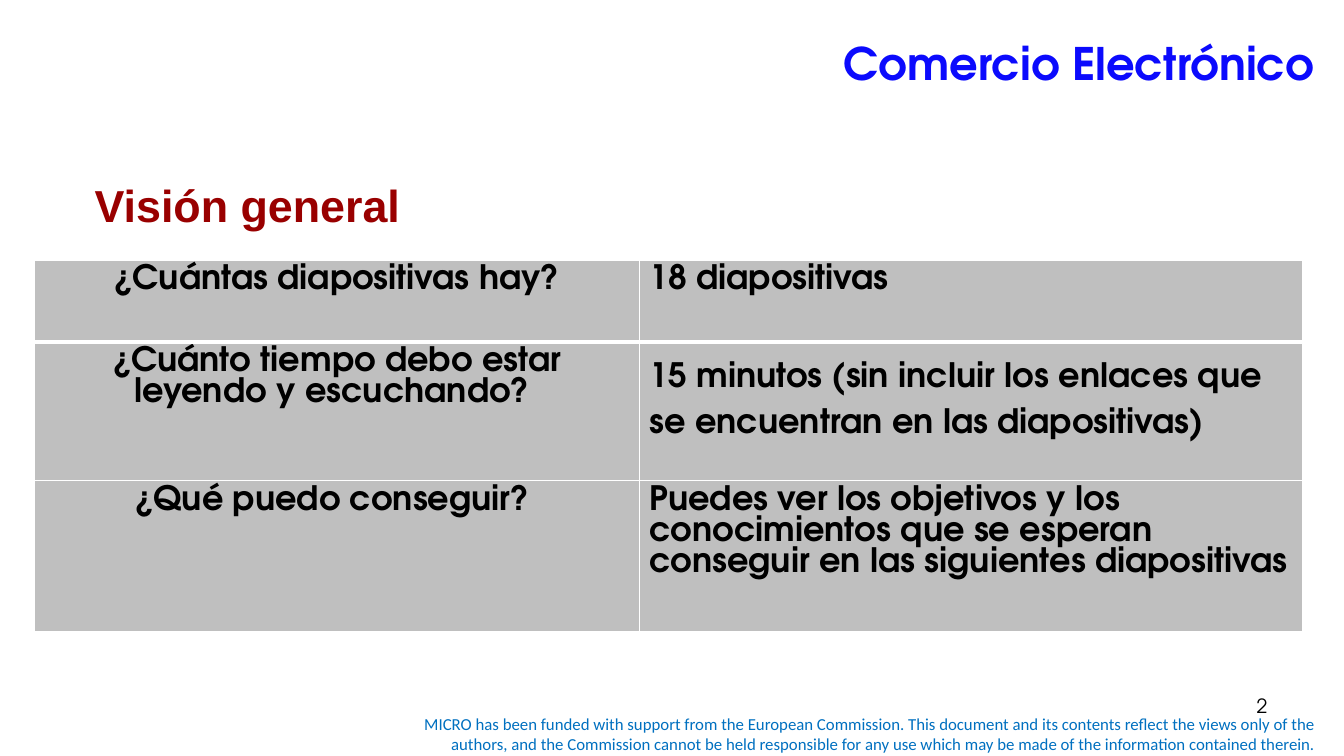
from lxml import etree
from pptx import Presentation
from pptx.dml.color import RGBColor
from pptx.enum.text import MSO_ANCHOR, PP_ALIGN
from pptx.oxml.ns import qn
from pptx.util import Inches, Pt

LEFT, CENTER, RIGHT = PP_ALIGN.LEFT, PP_ALIGN.CENTER, PP_ALIGN.RIGHT
TOP, MIDDLE = MSO_ANCHOR.TOP, MSO_ANCHOR.MIDDLE

BLUE = RGBColor(0x0B, 0x0A, 0xFD)
FOOTER_BLUE = RGBColor(0x00, 0x70, 0xC0)
DARK_RED = RGBColor(0x99, 0x00, 0x00)
GRAY = RGBColor(0xBF, 0xBF, 0xBF)
BLACK = RGBColor(0x00, 0x00, 0x00)
WHITE = RGBColor(0xFF, 0xFF, 0xFF)

MAIN_FONT = "TeX Gyre Adventor"
TITLE_ONLY = 5

FUNDING = (
    "MICRO has been funded with support from the European Commission. "
    "This document and its contents reflect the views only of the authors, "
    "and the Commission cannot be held responsible for any use which may be "
    "made of the information contained therein."
)
OVERVIEW = [
    ("¿Cuántas diapositivas hay?", "18 diapositivas"),
    ("¿Cuánto tiempo debo estar leyendo y escuchando? ",
     "15 minutos (sin incluir los enlaces que se encuentran en las diapositivas)"),
    ("¿Qué puedo conseguir? ",
     "Puedes ver los objetivos y los conocimientos que se esperan conseguir "
     "en las siguientes diapositivas"),
]
DURATION_ROW = 1


def write(frame, text, size=24, font=MAIN_FONT, color=BLACK, bold=False,
          align=LEFT, anchor=TOP, spacing=1.0):
    frame.word_wrap = True
    frame.vertical_anchor = anchor
    paragraph = frame.paragraphs[0]
    paragraph.alignment = align
    paragraph.line_spacing = spacing
    run = paragraph.add_run()
    run.text = text
    run.font.size = Pt(size)
    run.font.name = font
    run.font.bold = bold
    run.font.color.rgb = color


def add_border(cell, side, width):
    line = etree.SubElement(cell._tc.get_or_add_tcPr(), qn(f"a:ln{side}"),
                            w=str(Pt(width)))
    fill = etree.SubElement(line, qn("a:solidFill"))
    etree.SubElement(fill, qn("a:srgbClr"), val=str(WHITE))


class SlideBuilder:
    def __init__(self, deck):
        self.slide = deck.slides.add_slide(deck.slide_layouts[TITLE_ONLY])

    def title(self, text, left, top, width, height, **style):
        title = self.slide.shapes.title
        title.left, title.top = Inches(left), Inches(top)
        title.width, title.height = Inches(width), Inches(height)
        write(title.text_frame, text, **style)

    def text(self, text, left, top, width, height, **style):
        box = self.slide.shapes.add_textbox(
            Inches(left), Inches(top), Inches(width), Inches(height))
        write(box.text_frame, text, **style)

    def table(self, rows, left, top, widths, heights):
        table = self.slide.shapes.add_table(
            len(rows), len(widths), Inches(left), Inches(top),
            Inches(sum(widths)), Inches(sum(heights))).table
        table.first_row = table.horz_banding = False
        for column, width in zip(table.columns, widths):
            column.width = Inches(width)
        for index, (row, height) in enumerate(zip(rows, heights)):
            table.rows[index].height = Inches(height)
            for position, text in enumerate(row):
                cell = table.cell(index, position)
                for side in "LRTB":
                    under_first = (index, side) in ((0, "B"), (1, "T"))
                    add_border(cell, side, 3 if under_first else 1)
                cell.fill.solid()
                cell.fill.fore_color.rgb = GRAY
                is_duration = (index, position) == (DURATION_ROW, 1)
                write(cell.text_frame, text, bold=True,
                      align=LEFT if position else CENTER,
                      spacing=1.5 if is_duration else 1.0)


def main():
    deck = Presentation()
    deck.slide_width, deck.slide_height = Inches(13.33), Inches(7.5)
    builder = SlideBuilder(deck)
    builder.text(FUNDING, 3.75, 7.03, 9.4, 0.5, size=12, font="Calibri",
                 color=FOOTER_BLUE, align=RIGHT, anchor=MIDDLE)
    builder.table(OVERVIEW, 0.34, 2.58, [6, 6.58], [0.81, 1.38, 1.5])
    builder.text("2", 9.56, 6.83, 3.11, 0.52, size=14, align=RIGHT)
    builder.text("Visión general", 0.84, 1.71, 4.64, 0.64, size=32,
                 font="Arial", color=DARK_RED, bold=True)
    builder.title("Comercio Electrónico", 1.14, 0, 12, 1.25, size=32,
                  color=BLUE, bold=True, align=RIGHT, anchor=MIDDLE)
    deck.save("out.pptx")


if __name__ == "__main__":
    main()
